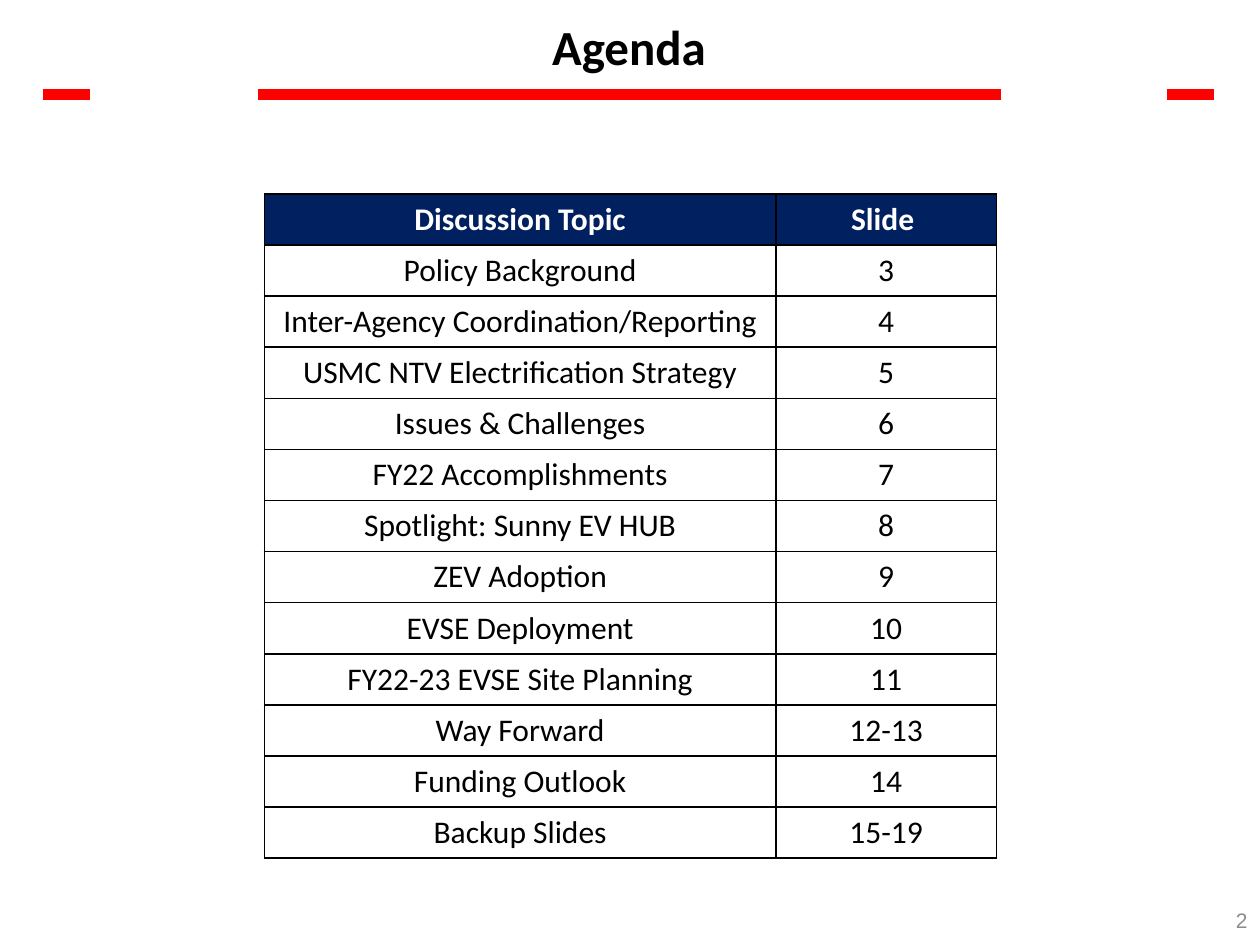
from lxml.etree import SubElement
from pptx import Presentation
from pptx.dml.color import RGBColor
from pptx.enum.shapes import MSO_CONNECTOR
from pptx.enum.text import MSO_ANCHOR, PP_ALIGN
from pptx.oxml.ns import qn
from pptx.util import Cm, Pt

COLORS = {"accent": "FF0000", "header": "002060", "black": "000000",
          "white": "FFFFFF", "number": "8C8C8C"}

AGENDA = [
    ("Discussion Topic", "Slide "),
    ("Policy Background", "3"),
    ("Inter-Agency Coordination/Reporting", "4"),
    ("USMC NTV Electrification Strategy", "5"),
    ("Issues & Challenges", "6"),
    ("FY22 Accomplishments", "7"),
    ("Spotlight: Sunny EV HUB", "8"),
    ("ZEV Adoption", "9"),
    ("EVSE Deployment", "10"),
    ("FY22-23 EVSE Site Planning", "11"),
    ("Way Forward", "12-13"),
    ("Funding Outlook", "14"),
    ("Backup Slides", "15-19"),
]


class SlideBuilder:
    """Holds the style and the page being filled."""

    def __init__(self, page, font="Calibri"):
        self.page = page
        self.font = font

    def color(self, name):
        return RGBColor.from_string(COLORS[name])

    def add_span(self, frame, text, size, color, align, bold=False, font=None):
        para = frame.paragraphs[0]
        para.alignment = align
        span = para.add_run()
        span.text = text
        span.font.name = font or self.font
        span.font.size = Pt(size)
        span.font.bold = bold
        span.font.color.rgb = self.color(color)

    def text(self, left, top, width, height, text, size, color, align, **style):
        box = self.page.shapes.add_textbox(Cm(left), Cm(top), Cm(width), Cm(height))
        frame = box.text_frame
        frame.word_wrap = True
        frame.vertical_anchor = MSO_ANCHOR.MIDDLE
        self.add_span(frame, text, size, color, align, **style)

    def rule(self, start, end, y):
        line = self.page.shapes.add_connector(
            MSO_CONNECTOR.STRAIGHT, Cm(start), Cm(y), Cm(end), Cm(y))
        line.line.color.rgb = self.color("accent")
        line.line.width = Pt(6)
        SubElement(line._element.spPr, qn("a:effectLst"))

    def border(self, cell):
        properties = cell._tc.get_or_add_tcPr()
        for side in ("lnL", "lnR", "lnT", "lnB"):
            edge = SubElement(properties, qn(f"a:{side}"), w=str(Pt(1)))
            fill = SubElement(edge, qn("a:solidFill"))
            SubElement(fill, qn("a:srgbClr"), val=COLORS["black"])

    def table(self, left, top, widths, row_height, rows):
        table = self.page.shapes.add_table(
            len(rows), len(widths), Cm(left), Cm(top),
            Cm(sum(widths)), Cm(row_height * len(rows))).table
        table.horz_banding = False
        for column, width in zip(table.columns, widths):
            column.width = Cm(width)
        for r, values in enumerate(rows):
            table.rows[r].height = Cm(row_height)
            is_header = r == 0
            for c, value in enumerate(values):
                cell = table.cell(r, c)
                self.border(cell)
                cell.fill.solid()
                cell.fill.fore_color.rgb = self.color("header" if is_header else "white")
                self.add_span(cell.text_frame, value, 18,
                              "white" if is_header else "black",
                              PP_ALIGN.CENTER, bold=is_header)


def main():
    deck = Presentation()
    deck.slide_width, deck.slide_height = Cm(25.4), Cm(19.05)
    builder = SlideBuilder(deck.slides.add_slide(deck.slide_layouts[6]))

    # Red rules below the title
    for start, end in ((5.21, 20.17), (0.86, 1.82), (23.52, 24.47)):
        builder.rule(start, end, 1.9)

    # Title and page number
    builder.text(3.89, 0.08, 17.58, 1.7, "Agenda", 28, "black",
                 PP_ALIGN.CENTER, bold=True)
    builder.text(19.69, 18.03, 5.71, 1.02, "2", 12, "number",
                 PP_ALIGN.RIGHT, font="Arial")

    # Agenda table
    builder.table(5.33, 3.91, (10.31, 4.45), 1.03, AGENDA)

    deck.save("out.pptx")


if __name__ == "__main__":
    main()
